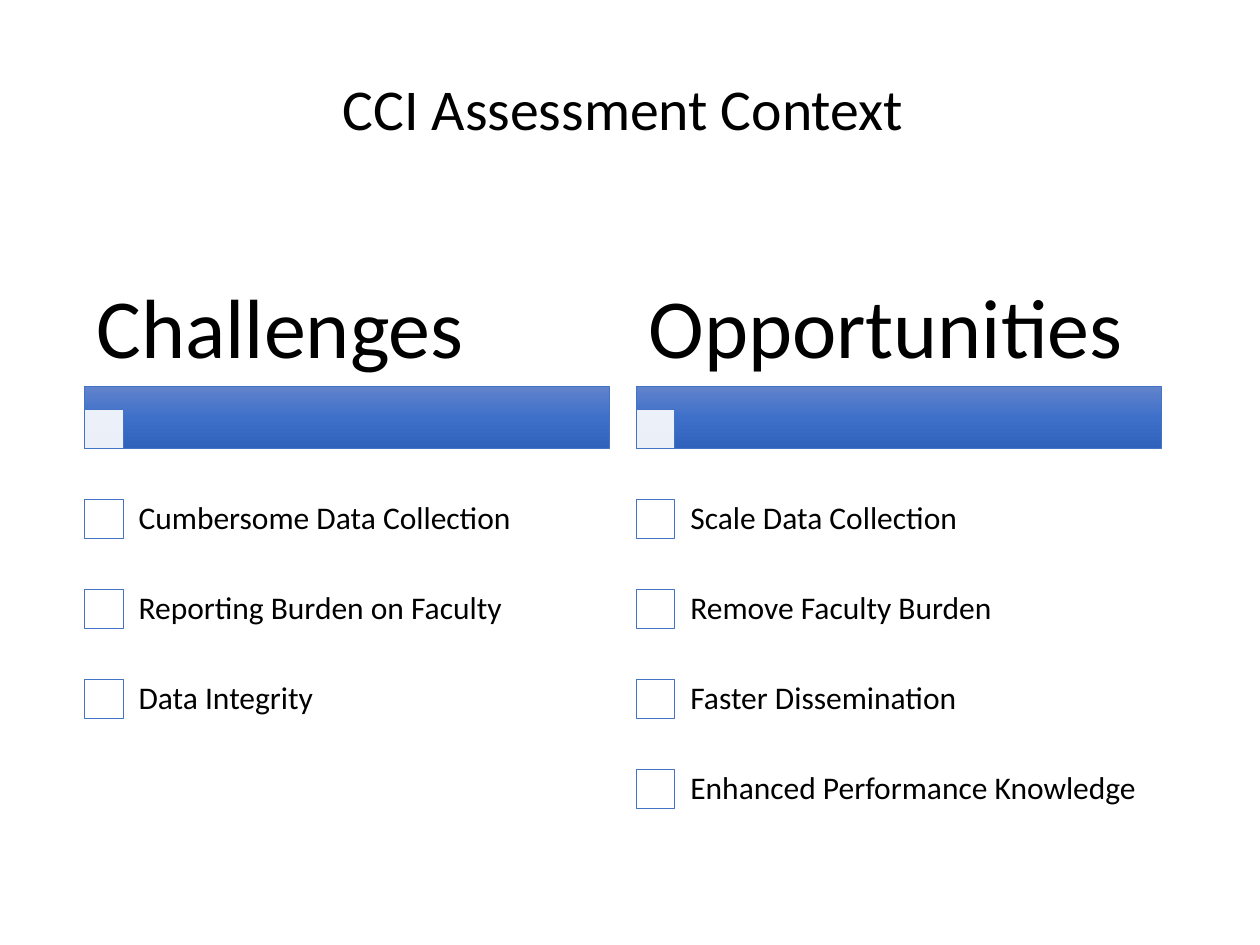
from copy import deepcopy
from dataclasses import dataclass

from lxml.etree import SubElement
from pptx import Presentation
from pptx.dml.color import RGBColor
from pptx.enum.shapes import MSO_SHAPE
from pptx.enum.text import MSO_ANCHOR, PP_ALIGN
from pptx.oxml.ns import qn
from pptx.shapes.autoshape import Shape
from pptx.slide import Slide
from pptx.util import Pt


@dataclass(frozen=True)
class Theme:
    font: str = "Calibri"
    text: str = "000000"
    paper: str = "FFFFFF"
    outline: str = "4472C4"
    gradient: tuple[str, ...] = ("6183CB", "3E70CA", "3062BB")
    title_size: float = 33
    heading_size: float = 48
    item_size: float = 18


@dataclass(frozen=True)
class Frame:
    left: float
    top: float
    width: float
    height: float


@dataclass(frozen=True)
class Column:
    left: float
    heading: str
    items: tuple[str, ...]


THEME = Theme()
COLUMN_WIDTH = 300.3
HEADING_TOP, HEADING_HEIGHT = 157.7, 63.3
BAR_TOP, BAR_HEIGHT = 221, 35.3
SQUARE = 22.2
ITEMS_TOP, ITEM_HEIGHT, ITEM_INDENT = 270.9, 51.4, 21
COLUMNS = (
    Column(48.2, "Challenges", (
        "Cumbersome Data Collection",
        "Reporting Burden on Faculty",
        "Data Integrity",
    )),
    Column(363.5, "Opportunities", (
        "Scale Data Collection",
        "Remove Faculty Burden",
        "Faster Dissemination",
        "Enhanced Performance Knowledge",
    )),
)


def add_text(page: Slide, frame: Frame, text: str, size: float,
             inset: tuple[float, float] = (7.2, 3.6),
             align: PP_ALIGN = PP_ALIGN.LEFT) -> None:
    box = page.shapes.add_textbox(
        Pt(frame.left), Pt(frame.top), Pt(frame.width), Pt(frame.height))
    text_frame = box.text_frame
    text_frame.word_wrap = True
    text_frame.vertical_anchor = MSO_ANCHOR.MIDDLE
    text_frame.margin_left = text_frame.margin_right = Pt(inset[0])
    text_frame.margin_top = text_frame.margin_bottom = Pt(inset[1])
    text_frame.text = text
    paragraph = text_frame.paragraphs[0]
    paragraph.alignment = align
    paragraph.line_spacing = 0.9
    span = paragraph.runs[0]
    span.font.name = THEME.font
    span.font.size = Pt(size)
    span.font.color.rgb = RGBColor.from_string(THEME.text)


def add_rectangle(page: Slide, frame: Frame) -> Shape:
    shape = page.shapes.add_shape(
        MSO_SHAPE.RECTANGLE,
        Pt(frame.left), Pt(frame.top), Pt(frame.width), Pt(frame.height))
    shape.shadow.inherit = False
    shape.fill.solid()
    shape.fill.fore_color.rgb = RGBColor.from_string(THEME.paper)
    shape.line.color.rgb = RGBColor.from_string(THEME.outline)
    shape.line.width = Pt(0.5)
    return shape


def fill_with_gradient(shape: Shape, colors: tuple[str, ...]) -> None:
    shape.fill.gradient()
    shape.fill.gradient_angle = 270
    stop_list = shape.element.spPr.find(f".//{qn('a:gsLst')}")
    while len(stop_list) < len(colors):
        stop_list.append(deepcopy(stop_list[0]))
    for index, (stop, color) in enumerate(zip(shape.fill.gradient_stops, colors)):
        stop.position = index / (len(colors) - 1)
        stop.color.rgb = RGBColor.from_string(color)


def set_opacity(shape: Shape, percent: int) -> None:
    color = shape.element.spPr.find(f"{qn('a:solidFill')}/{qn('a:srgbClr')}")
    SubElement(color, qn("a:alpha")).set("val", str(percent * 1000))


def add_column(page: Slide, column: Column) -> None:
    left = column.left
    bar = add_rectangle(page, Frame(left, BAR_TOP, COLUMN_WIDTH, BAR_HEIGHT))
    fill_with_gradient(bar, THEME.gradient)
    bar_square = add_rectangle(
        page, Frame(left, BAR_TOP + BAR_HEIGHT - SQUARE, SQUARE, SQUARE))
    set_opacity(bar_square, 90)
    add_text(page, Frame(left, HEADING_TOP, COLUMN_WIDTH, HEADING_HEIGHT),
             column.heading, THEME.heading_size, (7.2, 4.8))
    for index, item in enumerate(column.items):
        top = ITEMS_TOP + index * ITEM_HEIGHT
        square_top = top + (ITEM_HEIGHT - SQUARE) / 2
        add_rectangle(page, Frame(left, square_top, SQUARE, SQUARE))
        add_text(
            page,
            Frame(left + ITEM_INDENT, top, COLUMN_WIDTH - ITEM_INDENT, ITEM_HEIGHT),
            item, THEME.item_size, (10, 10))


def main() -> None:
    """Build the assessment context slide with its two checklists."""
    deck = Presentation()
    deck.slide_width, deck.slide_height = Pt(720), Pt(540)
    page = deck.slides.add_slide(deck.slide_layouts[6])
    add_text(page, Frame(48.2, 17.3, 615.6, 93.6), "CCI Assessment Context",
             THEME.title_size, align=PP_ALIGN.CENTER)
    for column in COLUMNS:
        add_column(page, column)
    deck.save("out.pptx")


if __name__ == "__main__":
    main()
